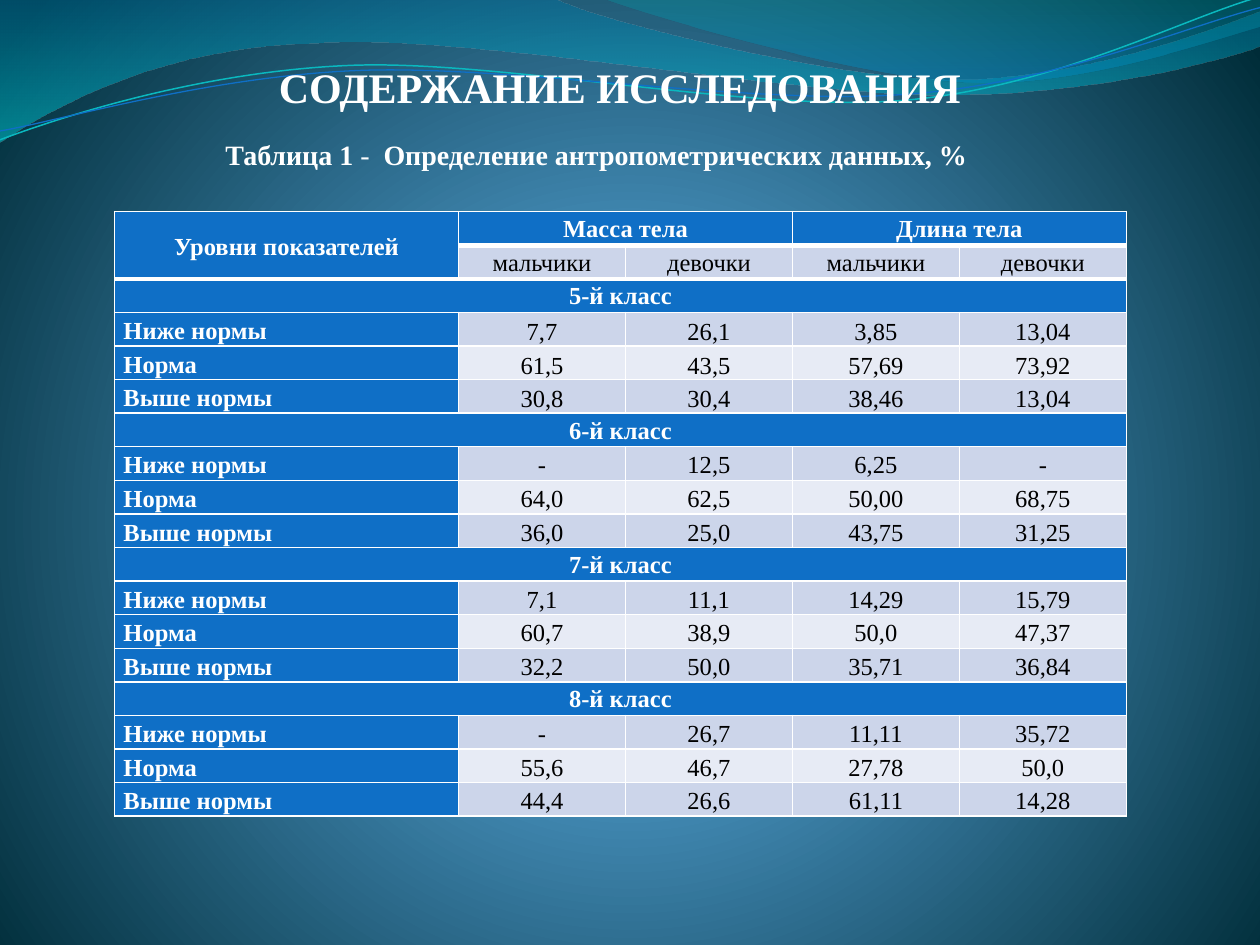
import dataclasses
import math

import lxml.etree
import pptx
import pptx.dml.color
import pptx.enum.text
import pptx.oxml.ns
import pptx.util

Inches, Pt = pptx.util.Inches, pptx.util.Pt
ALIGN, ANCHOR = pptx.enum.text.PP_ALIGN, pptx.enum.text.MSO_ANCHOR


@dataclasses.dataclass(frozen=True)
class Theme:
    font: str = "Times New Roman"
    light: str = "FFFFFF"
    dark: str = "000000"
    accent: str = "0F6FC6"
    accent_line: str = "0AB8BF"
    band_odd: str = "CCD5EA"
    band_even: str = "E7EBF5"
    title_size: int = 24
    caption_size: int = 16
    table_size: int = 14
    # Gradient stops: position %, colour, opacity %
    background: tuple = ((0, "4AA0D6", 100), (25, "4C98C7", 100), (100, "002C38", 100))
    wide_wave: tuple = ((0, "0074A1", 45), (100, "00C6CF", 55))
    right_wave: tuple = ((0, "00A1A9", 30), (80, "008BBF", 45))


THEME = Theme()

# Wave outlines: a start point, then lines (2 numbers) or Bezier curves (6 numbers)
WIDE_WAVE = [(0, 0), (4.4, -0.01), (4.76, 0.17, 6.64, 0.63, 7.58, 0.63),
             (8.53, 0.63, 9.58, 0.26, 10, 0.09), (10.01, 0.36),
             (9.83, 0.44, 8.7, 0.76, 7.46, 0.75), (6.22, 0.75, 3.82, 0.28, 2.57, 0.34),
             (1.29, 0.36, 0.46, 0.83, -0.01, 1.13), (0, 0)]
RIGHT_WAVE = [(4.79, -0.01), (5.09, 0.11, 6.82, 0.62, 7.69, 0.65),
              (8.56, 0.69, 9.61, 0.32, 10, 0.21), (10, 0), (4.79, -0.01)]
UPPER_LINE = [(0, 1.11), (0.48, 0.93, 1.58, 0.57, 2.77, 0.52),
              (3.95, 0.47, 5.93, 0.89, 7.13, 0.8), (8.33, 0.71, 9.38, 0.15, 9.98, -0.02)]
LOWER_LINE = [(0, 1.04), (0.47, 0.96, 1.64, 0.61, 2.83, 0.56),
              (4.03, 0.51, 5.97, 0.84, 7.17, 0.75), (8.36, 0.67, 9.41, 0.21, 10, 0.06)]
LINE_ANGLE = -2.7

LEVELS = ["Ниже нормы", "Норма", "Выше нормы"]
CLASSES = {
    "5-й класс": ["7,7 26,1 3,85 13,04", "61,5 43,5 57,69 73,92", "30,8 30,4 38,46 13,04"],
    "6-й класс": ["- 12,5 6,25 -", "64,0 62,5 50,00 68,75", "36,0 25,0 43,75 31,25"],
    "7-й класс": ["7,1 11,1 14,29 15,79", "60,7 38,9 50,0 47,37", "32,2 50,0 35,71 36,84"],
    "8-й класс": ["- 26,7 11,11 35,72", "55,6 46,7 27,78 50,0", "44,4 26,6 61,11 14,28"],
}


def rgb(color):
    return pptx.dml.color.RGBColor.from_string(color)


def add_element(parent, tag, **attributes):
    element = lxml.etree.SubElement(parent, pptx.oxml.ns.qn(tag))
    for name, value in attributes.items():
        element.set(name, str(value))
    return element


def set_gradient(fill, stops, circle=False):
    """Fill downwards, or outwards from a point below the slide."""
    fill.gradient()
    gradient = fill._fill._gradFill
    for child in list(gradient):
        gradient.remove(child)
    stop_list = add_element(gradient, "a:gsLst")
    for position, color, opacity in stops:
        stop = add_element(stop_list, "a:gs", pos=position * 1000)
        color_element = add_element(stop, "a:srgbClr", val=color)
        add_element(color_element, "a:alpha", val=opacity * 1000)
    if circle:
        circle_element = add_element(gradient, "a:path", path="circle")
        add_element(circle_element, "a:fillToRect", l=10000, t=110000, r=10000, b=100000)
    else:
        add_element(gradient, "a:lin", ang=5400000, scaled=1)


def draw_curves(shape, outline, angle):
    """Give a freeform true curves, kept in place when its box is turned."""
    curve = next(shape._element.iter(pptx.oxml.ns.qn("a:path")))
    for child in list(curve):
        curve.remove(child)
    curve.set("w", str(shape.width))
    curve.set("h", str(shape.height))
    cosine, sine = math.cos(math.radians(angle)), math.sin(math.radians(angle))
    for index, numbers in enumerate(outline):
        tag = "a:moveTo" if index == 0 else "a:lnTo" if len(numbers) == 2 else "a:cubicBezTo"
        segment = add_element(curve, tag)
        for x, y in zip(numbers[::2], numbers[1::2]):
            dx = Inches(x) - shape.left - shape.width / 2
            dy = Inches(y) - shape.top - shape.height / 2
            add_element(segment, "a:pt",
                        x=round(dx * cosine + dy * sine + shape.width / 2),
                        y=round(dy * cosine - dx * sine + shape.height / 2))
    if outline[0] == outline[-1]:
        add_element(curve, "a:close")
    shape.rotation = angle


def add_wave(shapes, box, outline, stops=None, line=None, width=None, angle=0):
    left, top, box_width, box_height = map(Inches, box)
    builder = shapes.build_freeform(left, top, scale=1.0)
    builder.add_line_segments([(left + box_width, top + box_height)], close=False)
    shape = builder.convert_to_shape()
    draw_curves(shape, outline, angle)
    shape.shadow.inherit = False
    if stops:
        set_gradient(shape.fill, stops)
        shape.line.fill.background()
    else:
        shape.fill.background()
        shape.line.color.rgb = rgb(line)
        shape.line.width = Pt(width)


def add_backdrop(slide):
    set_gradient(slide.background.fill, THEME.background, circle=True)
    add_wave(slide.shapes, (-0.01, -0.01, 10.02, 1.14), WIDE_WAVE, THEME.wide_wave)
    add_wave(slide.shapes, (4.79, -0.01, 5.21, 0.7), RIGHT_WAVE, THEME.right_wave)
    lines = slide.shapes.add_group_shape().shapes
    add_wave(lines, (-0.02, 0.22, 10.02, 0.71), UPPER_LINE,
             line=THEME.accent_line, width=0.85, angle=LINE_ANGLE)
    add_wave(lines, (-0.02, 0.3, 10.03, 0.58), LOWER_LINE,
             line=THEME.accent, width=0.75, angle=LINE_ANGLE)


def format_runs(paragraph, size, color, bold=True):
    for run in paragraph.runs:
        run.font.name = THEME.font
        run.font.size = Pt(size)
        run.font.bold = bold
        run.font.color.rgb = rgb(color)


def place_heading(slide, left, top, width, height):
    """The heading uses the subtitle placeholder; the unused title goes."""
    tree = slide.shapes._spTree
    tree.remove(slide.shapes.title._element)
    heading = slide.placeholders[1]
    heading.left, heading.top, heading.width, heading.height = left, top, width, height
    tree.append(heading._element)  # in front of the waves
    frame = heading.text_frame
    frame.text = "СОДЕРЖАНИЕ ИССЛЕДОВАНИЯ"
    frame.auto_size = pptx.enum.text.MSO_AUTO_SIZE.NONE
    frame.vertical_anchor = ANCHOR.TOP
    frame.margin_left, frame.margin_right = 0, Inches(0.02)
    paragraph = frame.paragraphs[0]
    paragraph.alignment = ALIGN.CENTER
    paragraph.space_before = Pt(3)
    paragraph._p.get_or_add_pPr().set("marR", str(Inches(0.05)))
    format_runs(paragraph, THEME.title_size, THEME.light)


def add_caption(slide, left, top, width, height):
    frame = slide.shapes.add_textbox(left, top, width, height).text_frame
    frame.word_wrap = True
    paragraph = frame.paragraphs[0]
    for text in ("Таблица 1 ", "-  ", "Определение антропометрических данных, %"):
        paragraph.add_run().text = text
    format_runs(paragraph, THEME.caption_size, THEME.light)
    paragraph.runs[1].font.bold = False


def set_borders(cell, row):
    """White grid, heavier under both header rows."""
    properties = cell._tc.get_or_add_tcPr()
    widths = {"L": 1, "R": 1, "T": 3 if row in (1, 2) else 1, "B": 3 if row in (0, 1) else 1}
    for index, (side, width) in enumerate(widths.items()):
        line = add_element(properties, f"a:ln{side}", w=Pt(width))
        add_element(add_element(line, "a:solidFill"), "a:srgbClr", val=THEME.light)
        properties.insert(index, line)


def fill_cell(cell, text, fill=None, align=ALIGN.CENTER, anchor=ANCHOR.TOP):
    """A cell without its own fill is a heading cell."""
    cell.text_frame.text = text
    cell.vertical_anchor = anchor
    cell.fill.solid()
    cell.fill.fore_color.rgb = rgb(fill or THEME.accent)
    paragraph = cell.text_frame.paragraphs[0]
    paragraph.alignment = align
    paragraph.line_spacing = 1.15
    format_runs(paragraph, THEME.table_size, THEME.dark if fill else THEME.light, not fill)


def add_data_table(slide, left, top, width, height):
    row_count = 2 + len(CLASSES) * (1 + len(LEVELS))
    table = slide.shapes.add_table(row_count, 5, left, top, width, height).table
    table.first_row = table.horz_banding = False
    label_width = Inches(2.73)
    for index, column in enumerate(table.columns):
        column.width = label_width if index == 0 else (width - label_width) // 4
    for index, row in enumerate(table.rows):
        row.height = height // row_count
        for cell in row.cells:
            cell.margin_left = cell.margin_right = Inches(0.07)
            cell.margin_top = cell.margin_bottom = 0
            set_borders(cell, index)

    # Two header rows
    table.cell(0, 0).merge(table.cell(1, 0))
    fill_cell(table.cell(0, 0), "Уровни показателей", anchor=ANCHOR.MIDDLE)
    for column, measure in ((1, "Масса тела"), (3, "Длина тела")):
        table.cell(0, column).merge(table.cell(0, column + 1))
        fill_cell(table.cell(0, column), measure)
        for offset, group in enumerate(("мальчики", "девочки")):
            fill_cell(table.cell(1, column + offset), group, THEME.band_odd)

    # One block of rows per school class
    for block, (name, values) in enumerate(CLASSES.items()):
        first = 2 + block * (1 + len(LEVELS))
        table.cell(first, 0).merge(table.cell(first, 4))
        fill_cell(table.cell(first, 0), name)
        anchor = ANCHOR.BOTTOM if block == 0 else ANCHOR.MIDDLE
        for row, (level, numbers) in enumerate(zip(LEVELS, values), start=first + 1):
            fill_cell(table.cell(row, 0), level, align=ALIGN.LEFT, anchor=ANCHOR.MIDDLE)
            band = THEME.band_even if level == "Норма" else THEME.band_odd
            for column, number in enumerate(numbers.split(), start=1):
                fill_cell(table.cell(row, column), number, band, anchor=anchor)


def main():
    presentation = pptx.Presentation()
    presentation.slide_width, presentation.slide_height = Inches(10), Inches(7.5)
    slide = presentation.slides.add_slide(presentation.slide_layouts[0])
    add_backdrop(slide)
    place_heading(slide, Inches(0.58), Inches(0.44), Inches(8.75), Inches(6.93))
    add_data_table(slide, Inches(0.91), Inches(1.68), Inches(8.03), Inches(4.8))
    add_caption(slide, Inches(1.69), Inches(1.04), Inches(6.61), Inches(0.67))
    presentation.save("out.pptx")


if __name__ == "__main__":
    main()
